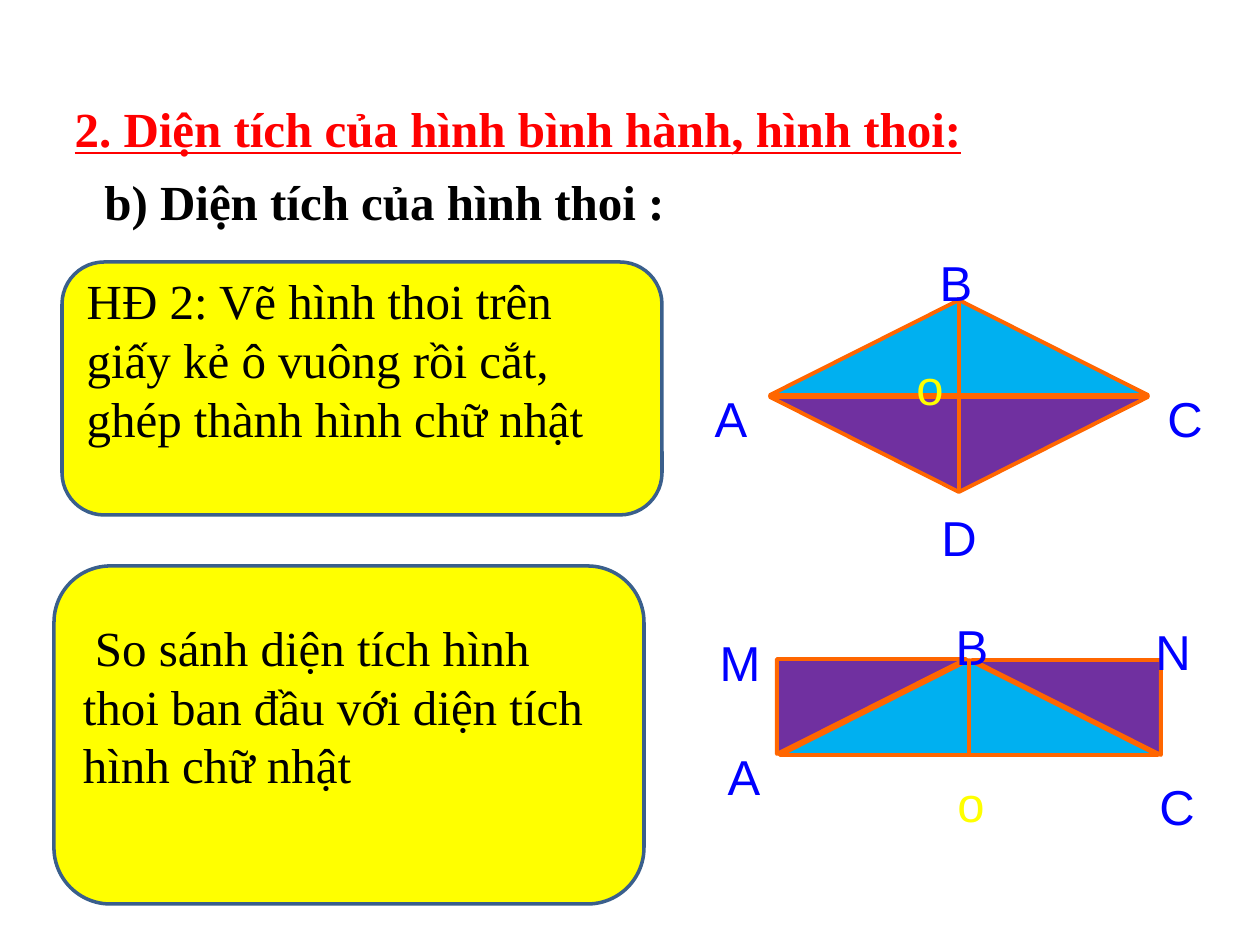
from dataclasses import dataclass

from lxml import etree
from pptx import Presentation
from pptx.dml.color import RGBColor
from pptx.enum.shapes import MSO_CONNECTOR, MSO_SHAPE
from pptx.enum.text import MSO_ANCHOR, MSO_AUTO_SIZE, PP_ALIGN
from pptx.oxml.ns import qn
from pptx.util import Emu, Pt

STRAIGHT = MSO_CONNECTOR.STRAIGHT
ROUNDED = MSO_SHAPE.ROUNDED_RECTANGLE
ISOSCELES = MSO_SHAPE.ISOSCELES_TRIANGLE
RIGHT_ANGLED = MSO_SHAPE.RIGHT_TRIANGLE
TOP, MIDDLE = MSO_ANCHOR.TOP, MSO_ANCHOR.MIDDLE
NO_AUTOFIT = MSO_AUTO_SIZE.NONE
LEFT, CENTER, JUSTIFY = PP_ALIGN.LEFT, PP_ALIGN.CENTER, PP_ALIGN.JUSTIFY

COLOURS = {
    "heading": "FF0000",
    "text": "000000",
    "panel": "FFFF00",
    "panel_edge": "3A5F8C",
    "upper": "00B0F0",
    "lower": "7030A0",
    "edge": "FF6600",
    "vertex": "0000FF",
    "centre": "FFFF00",
}
SERIF, SANS = "Times New Roman", "Arial"
TEXT_SIZE = 28
PX_PER_INCH = 126


@dataclass
class Panel:
    text: str
    left: int
    top: int
    width: int
    height: int
    indent: int = 0


@dataclass
class Triangle:
    kind: int
    colour: str
    left: int
    top: int
    width: int
    flips: str = ""


@dataclass
class Label:
    text: str
    centre: int
    top: int
    colour: str = "vertex"


@dataclass
class Upright:
    x: int
    top: int
    bottom: int


TRIANGLE_HEIGHT = 95
LABEL_WIDTH, LABEL_HEIGHT = 60, 70
PANEL_BOTTOM_INSET = 65

PANELS = [
    Panel("So sánh diện tích hình thoi ban đầu với diện tích hình chữ nhật",
          54, 566, 590, 338, indent=12),
    Panel("HĐ 2: Vẽ hình thoi trên giấy kẻ ô vuông rồi cắt, ghép thành hình chữ nhật",
          62, 262, 600, 253),
]
RHOMBUS = [
    Triangle(ISOSCELES, "upper", 770, 300, 378),
    Triangle(ISOSCELES, "lower", 770, 397, 378, "V"),
    Upright(959, 297, 491),
    Label("A", 731, 382),
    Label("B", 956, 246),
    Label("C", 1185, 382),
    Label("D", 959, 501),
    Label("o", 930, 350, "centre"),
]
RECTANGLE = [
    Label("A", 744, 740),
    Label("M", 740, 626),
    Label("C", 1177, 770),
    Label("o", 971, 767, "centre"),
    Triangle(ISOSCELES, "upper", 780, 660, 378),
    Triangle(RIGHT_ANGLED, "lower", 972, 660, 189, "HV"),
    Triangle(RIGHT_ANGLED, "lower", 777, 659, 189, "V"),
    Label("B", 972, 610),
    Label("N", 1173, 615),
    Upright(969, 660, 757),
]


def px(value: int) -> Emu:
    return Emu(round(value * 914400 / PX_PER_INCH))


def colour(name: str) -> RGBColor:
    return RGBColor.from_string(COLOURS[name])


def write(box, text: str, font: str, colour_name: str, align=LEFT, bold=False):
    frame = box.text_frame
    frame.text = text
    frame.auto_size = NO_AUTOFIT
    frame.vertical_anchor = TOP
    para = frame.paragraphs[0]
    para.alignment = align
    span = para.runs[0].font
    span.name, span.size, span.bold = font, Pt(TEXT_SIZE), bold
    span.color.rgb = colour(colour_name)
    return frame


def write_heading(box, text: str, colour_name: str, underline: bool) -> None:
    frame = write(box, text, SERIF, colour_name, JUSTIFY, bold=True)
    frame.word_wrap = True
    para = frame.paragraphs[0]
    para.line_spacing = 1.5
    para.runs[0].font.underline = underline


def add_filled(page, kind, bounds, fill: str, edge: str, weight: float):
    shape = page.shapes.add_shape(kind, *map(px, bounds))
    shape.shadow.inherit = False
    shape.fill.solid()
    shape.fill.fore_color.rgb = colour(fill)
    shape.line.color.rgb = colour(edge)
    shape.line.width = Pt(weight)
    return shape


def add_panel(page, panel: Panel) -> None:
    bounds = (panel.left, panel.top, panel.width, panel.height)
    shape = add_filled(page, ROUNDED, bounds, "panel", "panel_edge", 2)
    frame = write(shape, panel.text, SERIF, "text")
    frame.word_wrap = True
    frame.vertical_anchor = MIDDLE
    frame.margin_bottom = px(PANEL_BOTTOM_INSET)
    properties = frame.paragraphs[0]._p.get_or_add_pPr()
    properties.set("indent", str(px(panel.indent)))


def add_triangle(page, triangle: Triangle) -> None:
    bounds = (triangle.left, triangle.top, triangle.width, TRIANGLE_HEIGHT)
    shape = add_filled(page, triangle.kind, bounds, triangle.colour, "edge", 2.25)
    for axis in triangle.flips:
        shape._element.spPr.xfrm.set(f"flip{axis}", "1")


def add_label(page, label: Label) -> None:
    box = page.shapes.add_textbox(px(label.centre - LABEL_WIDTH // 2), px(label.top),
                                  px(LABEL_WIDTH), px(LABEL_HEIGHT))
    write(box, label.text, SANS, label.colour, CENTER).word_wrap = False


def add_upright(page, upright: Upright) -> None:
    line = page.shapes.add_connector(STRAIGHT, px(upright.x), px(upright.top),
                                     px(upright.x), px(upright.bottom))
    line.line.color.rgb = colour("edge")
    line.line.width = Pt(2.25)
    etree.SubElement(line._element.spPr, qn("a:effectLst"))


DRAW = {Panel: add_panel, Triangle: add_triangle, Label: add_label, Upright: add_upright}


def main() -> None:
    deck = Presentation()
    deck.slide_width, deck.slide_height = px(1260), px(945)
    page = deck.slides.add_slide(deck.slide_layouts[5])
    title = page.shapes.title
    title.left, title.top, title.width, title.height = map(px, (62, 63, 1124, 102))
    write_heading(title, "2. Diện tích của hình bình hành, hình thoi:", "heading", True)
    subtitle = page.shapes.add_textbox(*map(px, (92, 136, 1124, 102)))
    write_heading(subtitle, "b) Diện tích của hình thoi :", "text", False)
    for item in PANELS + RHOMBUS + RECTANGLE:
        DRAW[type(item)](page, item)
    deck.save("out.pptx")


if __name__ == "__main__":
    main()
